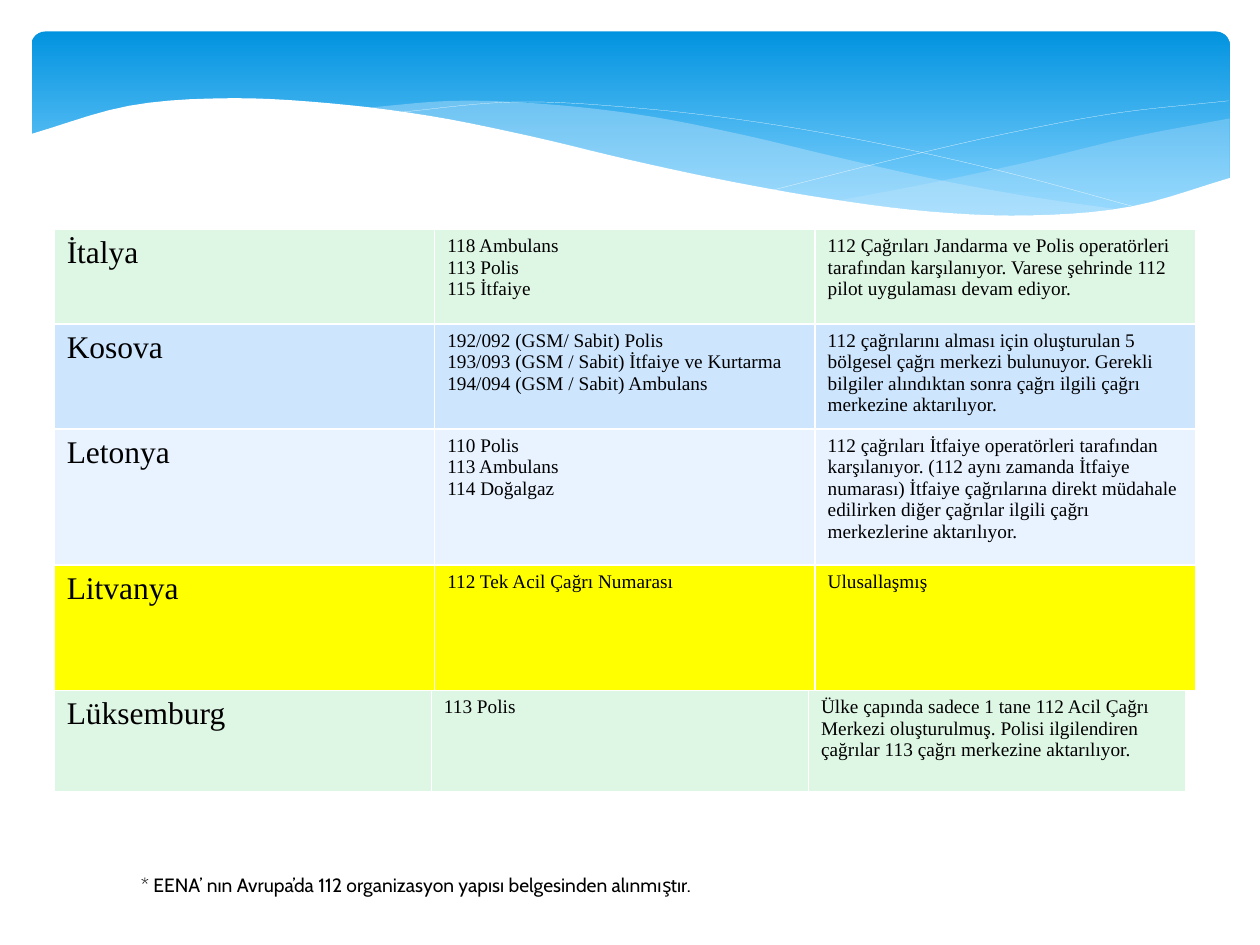
from collections import namedtuple

from lxml import etree
from pptx import Presentation
from pptx.dml.color import RGBColor
from pptx.enum.shapes import MSO_SHAPE
from pptx.enum.text import MSO_AUTO_SIZE
from pptx.oxml.ns import qn
from pptx.util import Inches, Pt

ROUNDED = MSO_SHAPE.ROUNDED_RECTANGLE
GROW = MSO_AUTO_SIZE.SHAPE_TO_FIT_TEXT
BLACK = RGBColor(0x00, 0x00, 0x00)
WHITE = RGBColor(0xFF, 0xFF, 0xFF)
DEEP_BLUE = RGBColor(0x02, 0x93, 0xE0)
SKY_BLUE = RGBColor(0x83, 0xD3, 0xFE)
PALE_BLUE = RGBColor(0xC6, 0xE7, 0xFC)
GREEN = RGBColor(0xDE, 0xF6, 0xE4)
BLUE = RGBColor(0xCE, 0xE5, 0xFE)
ICE = RGBColor(0xE8, 0xF3, 0xFF)
YELLOW = RGBColor(0xFF, 0xFF, 0x00)
SERIF = "Times New Roman"
SANS = "Cabin"
NAME_SIZE = 18
BODY_SIZE = 11
CURVE_STEPS = 60
WAVE_BOTTOM = 2.24

Edge = namedtuple("Edge", "left right heights")
Country = namedtuple("Country", "color name numbers remark")

WHITE_CREST = Edge(0.23, 9.77, [1.07, 0.84, 0.78, 0.82, 0.92, 1.08, 1.27,
                                1.44, 1.58, 1.68, 1.71, 1.64, 1.41])
MIDDLE_CREST = Edge(2.86, 8.93, [0.86, 0.8, 0.83, 0.92, 1.07, 1.25, 1.42, 1.56, 1.67])
RIGHT_CREST = Edge(6.61, 9.76, [1.6, 1.45, 1.28, 1.09, 0.94])
FALLING_LINE = Edge(3.09, 9.07, [0.9, 0.81, 0.86, 0.98, 1.16, 1.39, 1.66])
RISING_LINE = Edge(6.13, 9.75, [1.51, 1.28, 1.07, 0.9, 0.8])

COUNTRIES = [
    Country(GREEN, "İtalya", ["118 Ambulans", "113 Polis", "115 İtfaiye"],
            "112 Çağrıları Jandarma ve Polis operatörleri tarafından karşılanıyor. "
            "Varese şehrinde 112 pilot uygulaması devam ediyor."),
    Country(BLUE, "Kosova", ["192/092 (GSM/ Sabit) Polis",
                             "193/093 (GSM / Sabit) İtfaiye ve Kurtarma",
                             "194/094 (GSM / Sabit) Ambulans"],
            "112 çağrılarını alması için oluşturulan 5 bölgesel çağrı merkezi bulunuyor. "
            "Gerekli bilgiler alındıktan sonra çağrı ilgili çağrı merkezine aktarılıyor."),
    Country(ICE, "Letonya", ["110 Polis", "113 Ambulans", "114 Doğalgaz"],
            "112 çağrıları İtfaiye operatörleri tarafından karşılanıyor. "
            "(112 aynı zamanda İtfaiye numarası) İtfaiye çağrılarına direkt müdahale "
            "edilirken diğer çağrılar ilgili çağrı merkezlerine aktarılıyor."),
    Country(YELLOW, "Litvanya", ["112 Tek Acil Çağrı Numarası"], "Ulusallaşmış"),
]
LUXEMBOURG = [
    Country(GREEN, "Lüksemburg", ["113 Polis"],
            "Ülke çapında sadece 1 tane 112 Acil Çağrı Merkezi oluşturulmuş. "
            "Polisi ilgilendiren çağrılar 113 çağrı merkezine aktarılıyor."),
]


def height_at(edge, x):
    """Return the height at x on a Catmull-Rom curve through evenly spaced heights."""
    heights = edge.heights
    knots = [2 * heights[0] - heights[1], *heights, 2 * heights[-1] - heights[-2]]
    place = (x - edge.left) / (edge.right - edge.left) * (len(heights) - 1)
    index = min(int(place), len(heights) - 2)
    t = place - index
    before, start, end, after = knots[index:index + 4]
    return start + t / 2 * (end - before
                            + t * (2 * before - 5 * start + 4 * end - after)
                            + t * t * (3 * (start - end) + after - before))


def trace(edge, left, right):
    """List points along an edge from left to right."""
    step = (right - left) / CURVE_STEPS
    places = [left + step * index for index in range(CURVE_STEPS + 1)]
    return [(x, height_at(edge, x)) for x in places]


def add_band(page):
    """Add the rounded gradient band at the top."""
    band = page.shapes.add_shape(ROUNDED, Inches(0.25), Inches(0.25), Inches(9.51), Inches(1.56))
    band.adjustments[0] = 0.07
    band.shadow.inherit = False
    band.line.fill.background()
    band.fill.gradient()
    band.fill.gradient_angle = 270
    stops = zip(band.fill.gradient_stops, (DEEP_BLUE, SKY_BLUE), (0, 0.9))
    for stop, color, position in stops:
        stop.color.rgb = color
        stop.position = position


def add_outline(page, points, closed):
    """Draw a freeform through points given in inches."""
    corners = [(Inches(x), Inches(y)) for x, y in points]
    builder = page.shapes.build_freeform(*corners[0])
    builder.add_line_segments(corners[1:], close=closed)
    outline = builder.convert_to_shape()
    outline.shadow.inherit = False
    return outline


def add_wave(page, points, color):
    """Add a filled wave without a line."""
    wave = add_outline(page, points, True)
    wave.line.fill.background()
    wave.fill.solid()
    wave.fill.fore_color.rgb = color
    return wave


def add_pale_wave(page, crest, opacity):
    """Add a translucent wave between its crest and the white crest."""
    upper = trace(crest, crest.left, crest.right)
    lower = trace(WHITE_CREST, crest.left, crest.right)
    wave = add_wave(page, upper + lower[::-1], PALE_BLUE)
    tint = wave.fill._xPr.find(".//" + qn("a:srgbClr"))
    etree.SubElement(tint, qn("a:alpha"), val=str(opacity * 1000))


def add_white_wave(page):
    """Add the white wave that covers the foot of the band."""
    crest = trace(WHITE_CREST, WHITE_CREST.left, WHITE_CREST.right)
    foot = [(WHITE_CREST.right, WAVE_BOTTOM), (WHITE_CREST.left, WAVE_BOTTOM)]
    add_wave(page, crest + foot, WHITE)


def add_curve(page, edge):
    """Add a white hairline curve."""
    curve = add_outline(page, trace(edge, edge.left, edge.right), False)
    curve.fill.background()
    curve.line.color.rgb = WHITE
    curve.line.width = Pt(0.1)


def add_span(para, text, size, font):
    """Add one black run to a paragraph."""
    span = para.add_run()
    span.text = text
    span.font.size = Pt(size)
    span.font.name = font
    span.font.color.rgb = BLACK


def set_borders(cell):
    """Give a cell thin white borders."""
    properties = cell._tc.get_or_add_tcPr()
    for side in "LRTB":
        border = etree.SubElement(properties, qn(f"a:ln{side}"), w=str(Pt(1)))
        fill = etree.SubElement(border, qn("a:solidFill"))
        etree.SubElement(fill, qn("a:srgbClr"), val=str(WHITE))


def fill_cell(cell, lines, size, color):
    """Write the lines of a cell and set its look."""
    set_borders(cell)
    cell.fill.solid()
    cell.fill.fore_color.rgb = color
    frame = cell.text_frame
    for index, line in enumerate(lines):
        para = frame.add_paragraph() if index else frame.paragraphs[0]
        add_span(para, line, size, SERIF)


def add_country_table(page, top, width, heights, countries):
    """Add a table with one country in each row."""
    table = page.shapes.add_table(len(countries), 3, Inches(0.43), Inches(top),
                                  Inches(width), Inches(sum(heights))).table
    table.first_row = False
    table.horz_banding = False
    for row, height, country in zip(table.rows, heights, countries):
        row.height = Inches(height)
        name, numbers, remark = row.cells
        fill_cell(name, [country.name], NAME_SIZE, country.color)
        fill_cell(numbers, country.numbers, BODY_SIZE, country.color)
        fill_cell(remark, [country.remark], BODY_SIZE, country.color)


def add_source_note(page):
    """Add the note that names the source."""
    box = page.shapes.add_textbox(Inches(1.02), Inches(6.88), Inches(4.68), Inches(0.29))
    box.text_frame.word_wrap = False
    box.text_frame.auto_size = GROW
    add_span(box.text_frame.paragraphs[0],
             "* EENA’ nın Avrupa’da 112 organizasyon yapısı belgesinden alınmıştır.",
             BODY_SIZE, SANS)


def main():
    """Build the slide and save the deck."""
    deck = Presentation()
    deck.slide_width, deck.slide_height = Inches(10), Inches(7.5)
    page = deck.slides.add_slide(deck.slide_layouts[6])
    add_band(page)
    add_pale_wave(page, RIGHT_CREST, 29)
    add_pale_wave(page, MIDDLE_CREST, 40)
    add_curve(page, FALLING_LINE)
    add_curve(page, RISING_LINE)
    add_white_wave(page)
    add_source_note(page)
    add_country_table(page, 1.82, 9.06, [0.75, 0.83, 1.08, 1], COUNTRIES)
    add_country_table(page, 5.48, 8.98, [0.8], LUXEMBOURG)
    deck.save("out.pptx")


if __name__ == "__main__":
    main()
